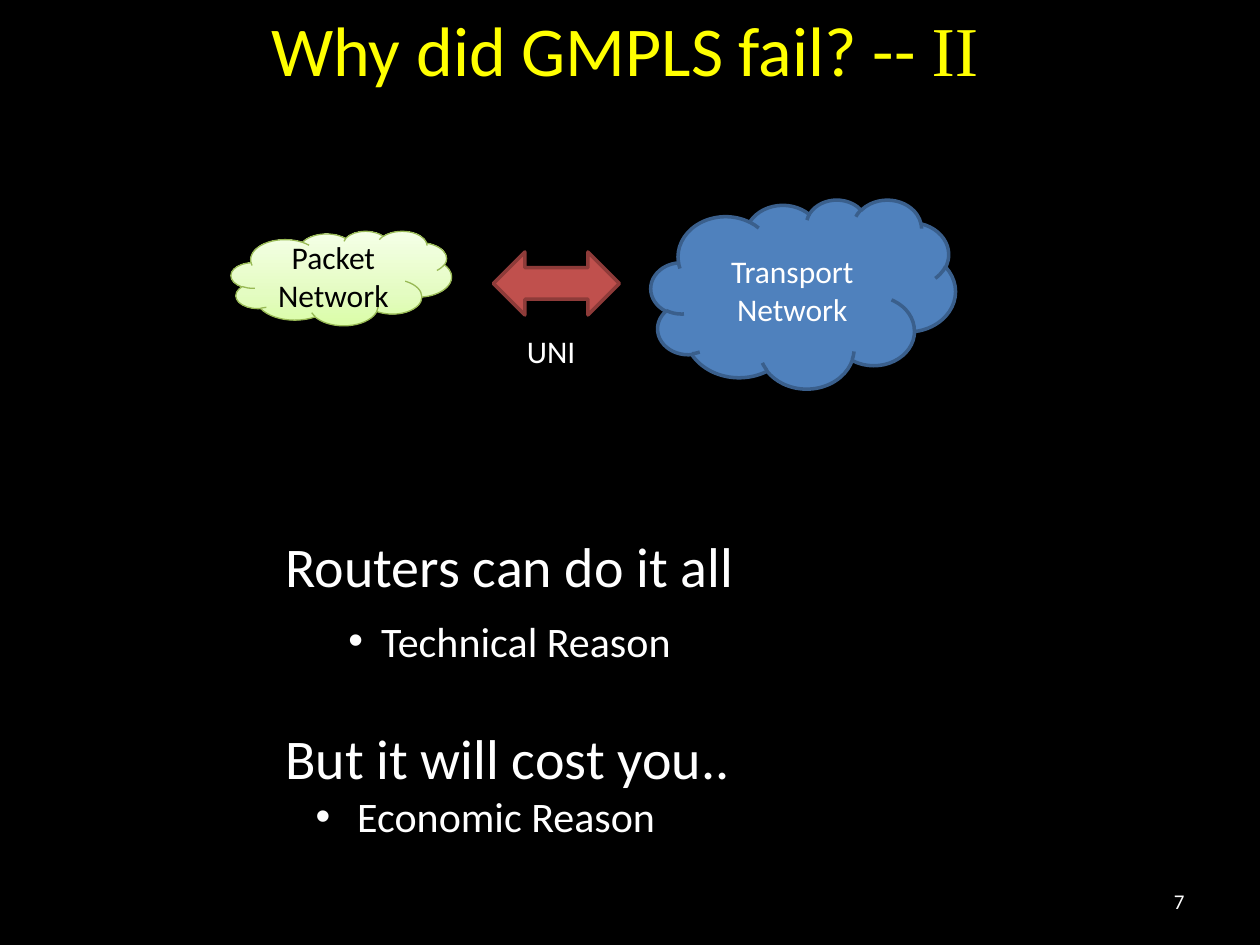
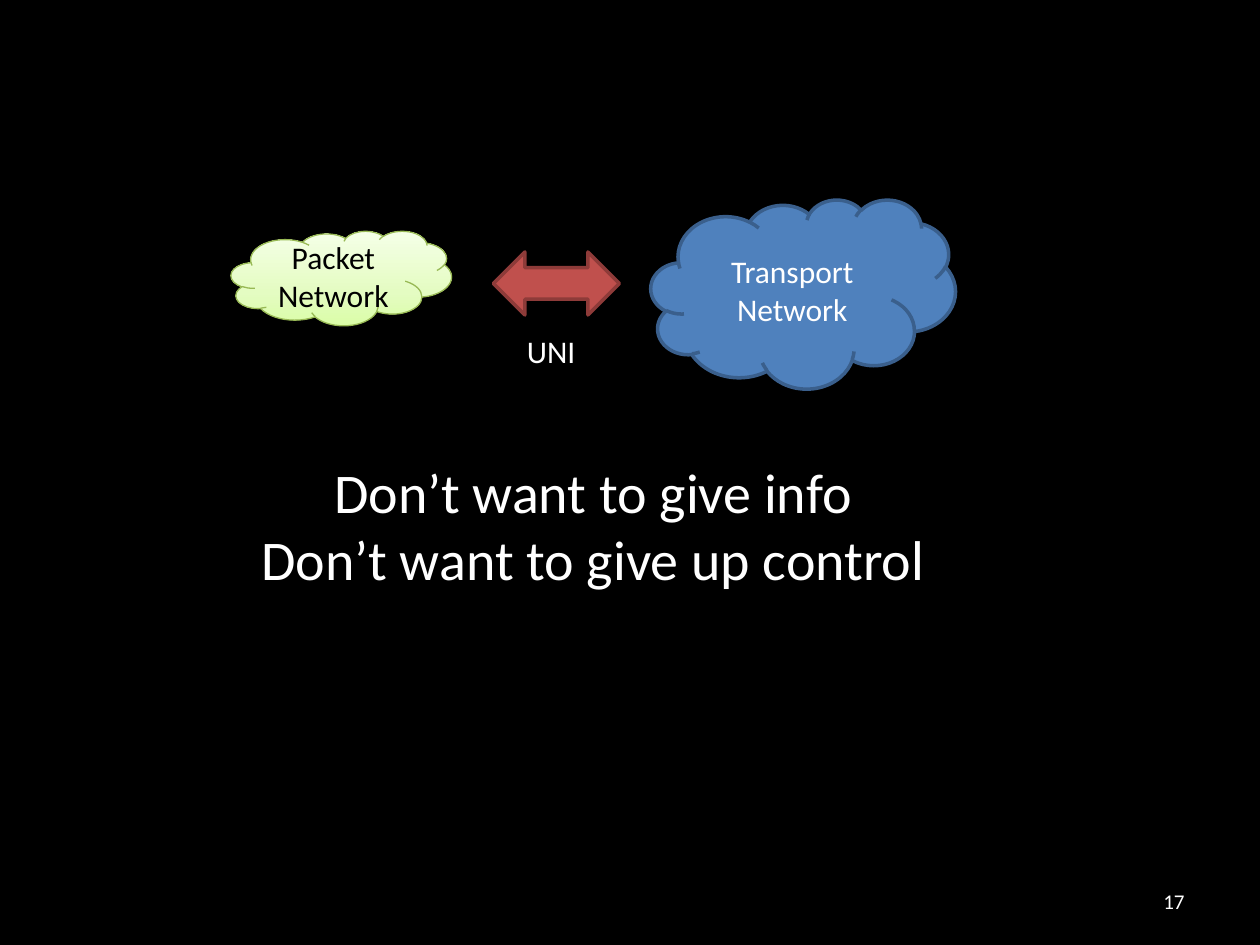
from copy import deepcopy
from dataclasses import dataclass

from lxml import etree
from pptx import Presentation
from pptx.dml.color import RGBColor
from pptx.enum.shapes import MSO_SHAPE
from pptx.enum.text import MSO_ANCHOR, MSO_AUTO_SIZE, PP_ALIGN
from pptx.oxml.ns import qn
from pptx.util import Inches, Pt

CLOUD, ARROW = MSO_SHAPE.CLOUD, MSO_SHAPE.LEFT_RIGHT_ARROW
LEFT, MID, RIGHT = PP_ALIGN.LEFT, PP_ALIGN.CENTER, PP_ALIGN.RIGHT
TOP, CENTER = MSO_ANCHOR.TOP, MSO_ANCHOR.MIDDLE
NO_FIT = MSO_AUTO_SIZE.NONE

HEX = {
    "back": "000000", "text": "FFFFFF", "title": "FFFF00",
    "blue": "4F81BD", "navy": "3A5F8C",
    "red": "C0504D", "wine": "8E3B39",
    "lime": "DAFDA7", "pale": "E4FCC2", "mist": "F5FFE7", "leaf": "98B955",
}
FONT, SERIF = "Calibri", "Times New Roman"
WIDE, HIGH = Inches(10), Inches(7.5)
COLS, ROWS = 120, 90
TITLE_ONLY, BLANK = 5, 6


@dataclass
class Area:
    """Left, top, width and height in grid columns and rows."""
    col: float
    row: float
    cols: float
    rows: float

    def box(self) -> tuple:
        x, y = WIDE / COLS, HIGH / ROWS
        return (round(self.col * x), round(self.row * y),
                round(self.cols * x), round(self.rows * y))


@dataclass
class Line:
    text: str
    size: int = 18
    color: str = "text"
    align: PP_ALIGN = LEFT
    left: float = 0  # text edge in inches, for a bulleted line
    hang: float = 0  # gap from bullet to text in inches


@dataclass
class Note:
    area: Area
    lines: list
    anchor: MSO_ANCHOR = TOP


@dataclass
class Node:
    kind: MSO_SHAPE
    area: Area
    fills: list  # one colour, or (position, colour) stops from the bottom up
    edge: str
    weight: float
    label: str = ""
    ink: str = "text"


NODES = [
    Node(CLOUD, Area(62, 19, 29, 18), ["blue"], "navy", 2, "Transport Network"),
    Node(CLOUD, Area(22, 22, 21, 9),
         [(0, "lime"), (0.35, "pale"), (1, "mist")],
         "leaf", 0.75, "Packet Network", "back"),
    Node(ARROW, Area(47, 24, 12, 6), ["red"], "wine", 2),
]
UNI = Note(Area(49, 31, 12, 4.8), [Line("UNI")])

FAIL = [
    Note(Area(26, 50, 86, 7.7), [Line("Routers can do it all", 32)]),
    Note(Area(32, 58, 45, 6),
         [Line("Technical Reason", 24, left=0.26, hang=0.26)]),
    Note(Area(26, 68.3, 86, 12.5),
         [Line("But it will cost you..", 32),
          Line("Economic Reason", 24, left=0.57, hang=0.33)]),
]
WANT = [
    Note(Area(21, 43, 71, 14.2),
         [Line("Don’t want to give info", 32, align=MID),
          Line("Don’t want to give up control", 32, align=MID)]),
]


def rgb(name: str) -> RGBColor:
    return RGBColor.from_string(HEX[name])


def style(run, size: int, color: str, face: str = FONT) -> None:
    run.font.size, run.font.name = Pt(size), face
    run.font.color.rgb = rgb(color)


def write(frame, lines: list, anchor: MSO_ANCHOR) -> None:
    frame.word_wrap, frame.vertical_anchor = True, anchor
    frame.text = "\n".join(line.text for line in lines)
    for para, line in zip(frame.paragraphs, lines):
        para.alignment = line.align
        for run in para.runs:
            style(run, line.size, line.color)
        if line.hang:
            props = para._p.get_or_add_pPr()
            props.set("marL", str(Inches(line.left)))
            props.set("indent", str(-Inches(line.hang)))
            etree.SubElement(props, qn("a:buFont"), typeface="Arial")
            etree.SubElement(props, qn("a:buChar"), char="•")


def add_note(slide, note: Note) -> None:
    box = slide.shapes.add_textbox(*note.area.box())
    write(box.text_frame, note.lines, note.anchor)


def blend(shape, stops: list) -> None:
    fill = shape.fill
    fill.gradient()
    fill.gradient_angle = 90
    # The default gradient has two stops: repeat the first as needed
    root = shape.element.xpath(".//a:gsLst")[0]
    for _ in range(len(stops) - len(root)):
        root.insert(1, deepcopy(root[0]))
    for stop, (place, name) in zip(fill.gradient_stops, stops):
        stop.position = place
        stop.color.rgb = rgb(name)


def add_node(slide, node: Node) -> None:
    shape = slide.shapes.add_shape(node.kind, *node.area.box())
    shape.shadow.inherit = False
    if len(node.fills) > 1:
        blend(shape, node.fills)
    else:
        shape.fill.solid()
        shape.fill.fore_color.rgb = rgb(node.fills[0])
    shape.line.color.rgb = rgb(node.edge)
    shape.line.width = Pt(node.weight)
    if node.label:
        write(shape.text_frame,
              [Line(node.label, color=node.ink, align=MID)], CENTER)


def add_title(slide, text: str, tail: str) -> None:
    title = slide.shapes.title
    title.left, title.top, title.width, title.height = Area(3, 0, 113, 7).box()
    frame = title.text_frame
    frame.auto_size = NO_FIT
    write(frame, [Line(text, 40, "title", MID)], TOP)
    run = frame.paragraphs[0].add_run()
    run.text = tail
    style(run, 40, "title", SERIF)


def add_slide(deck, layout: int, number: int, notes: list):
    slide = deck.slides.add_slide(deck.slide_layouts[layout])
    # Page number
    add_note(slide, Note(Area(86, 83.4, 28, 4.8),
                         [Line(str(number), 12, align=RIGHT)], CENTER))
    # Network diagram
    for node in NODES:
        add_node(slide, node)
    # Captions and remarks
    for note in [UNI, *notes]:
        add_note(slide, note)
    return slide


def main() -> None:
    deck = Presentation()
    deck.slide_width, deck.slide_height = WIDE, HIGH

    # Shared background
    fill = deck.slide_master.background.fill
    fill.solid()
    fill.fore_color.rgb = rgb("back")

    fail = add_slide(deck, TITLE_ONLY, 7, FAIL)
    add_title(fail, "Why did GMPLS fail? -- ", "II")
    add_slide(deck, BLANK, 17, WANT)
    deck.save("out.pptx")


if __name__ == "__main__":
    main()
